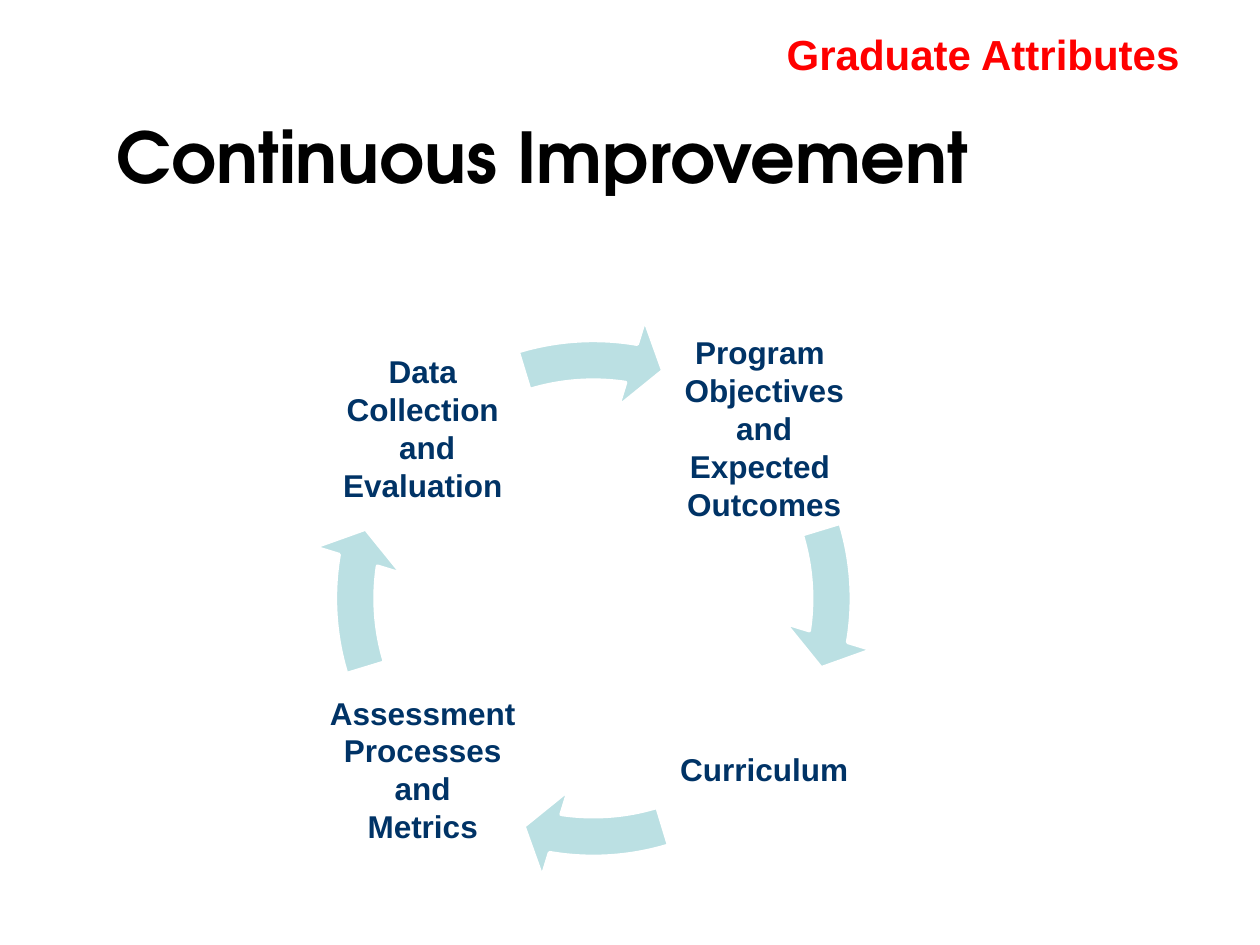
from pptx import Presentation
from pptx.dml.color import RGBColor
from pptx.enum.shapes import MSO_SHAPE
from pptx.enum.text import MSO_ANCHOR, PP_ALIGN
from pptx.util import Inches, Pt


def color(value):
    return RGBColor.from_string(value)


def add_text(box, lines, align, size, font_name, font_color, margin=None):
    left, top, width, height = [Inches(length) for length in box]
    shape = slide.shapes.add_textbox(left, top, width, height)
    text_frame = shape.text_frame
    text_frame.word_wrap = True
    text_frame.vertical_anchor = MSO_ANCHOR.MIDDLE
    if margin is not None:
        text_frame.margin_left = text_frame.margin_right = Inches(margin)
        text_frame.margin_top = text_frame.margin_bottom = Inches(margin)
    text_frame.text = "\n".join(lines)
    for paragraph in text_frame.paragraphs:
        paragraph.alignment = align
        for run in paragraph.runs:
            run.font.size = Pt(size)
            run.font.name = font_name
            run.font.bold = True
            run.font.color.rgb = color(font_color)
    return text_frame


presentation = Presentation()
presentation.slide_width = Inches(10)
presentation.slide_height = Inches(7.5)
slide = presentation.slides.add_slide(presentation.slide_layouts[6])

title = add_text((0.83, 0.67, 9.17, 1.25), ["Continuous Improvement"],
                 PP_ALIGN.LEFT, 40, "TeX Gyre Adventor", "000000")
title.paragraphs[0].line_spacing = 0.8

left_column, right_column = 2.56, 5.27
top_row, bottom_row = 2.6, 5.31
stages = [
    (right_column, top_row, ["Program ", "Objectives and", "Expected ", "Outcomes"]),
    (right_column, bottom_row, ["Curriculum"]),
    (left_column, bottom_row, ["Assessment ", "Processes", "and", "Metrics"]),
    (left_column, top_row, ["Data", "Collection", " and", "Evaluation"]),
]
full_turn = 216
quarter_turn = full_turn / 4

for index, (left, top, lines) in enumerate(stages):
    add_text((left, top, 1.59, 1.59), lines, PP_ALIGN.CENTER, 18, "Arial", "003366", 0.03)
    arrow = slide.shapes.add_shape(MSO_SHAPE.CIRCULAR_ARROW, Inches(2.46), Inches(2.5),
                                   Inches(4.5), Inches(4.5))
    arrow.shadow.inherit = False
    arrow.fill.solid()
    arrow.fill.fore_color.rgb = color("BBE0E3")
    arrow.line.color.rgb = color("FFFFFF")
    arrow.line.width = Pt(2)
    head_angle = 5.52 + index * quarter_turn
    tail_angle = (205.83 + index * quarter_turn) % full_turn
    for position, value in enumerate((0.07, 4.65, head_angle, tail_angle, 0.08)):
        arrow.adjustments[position] = value

add_text((4.13, 0.17, 5.33, 0.51), ["Graduate Attributes"],
         PP_ALIGN.RIGHT, 24, "Arial", "FF0000")

presentation.save("out.pptx")
